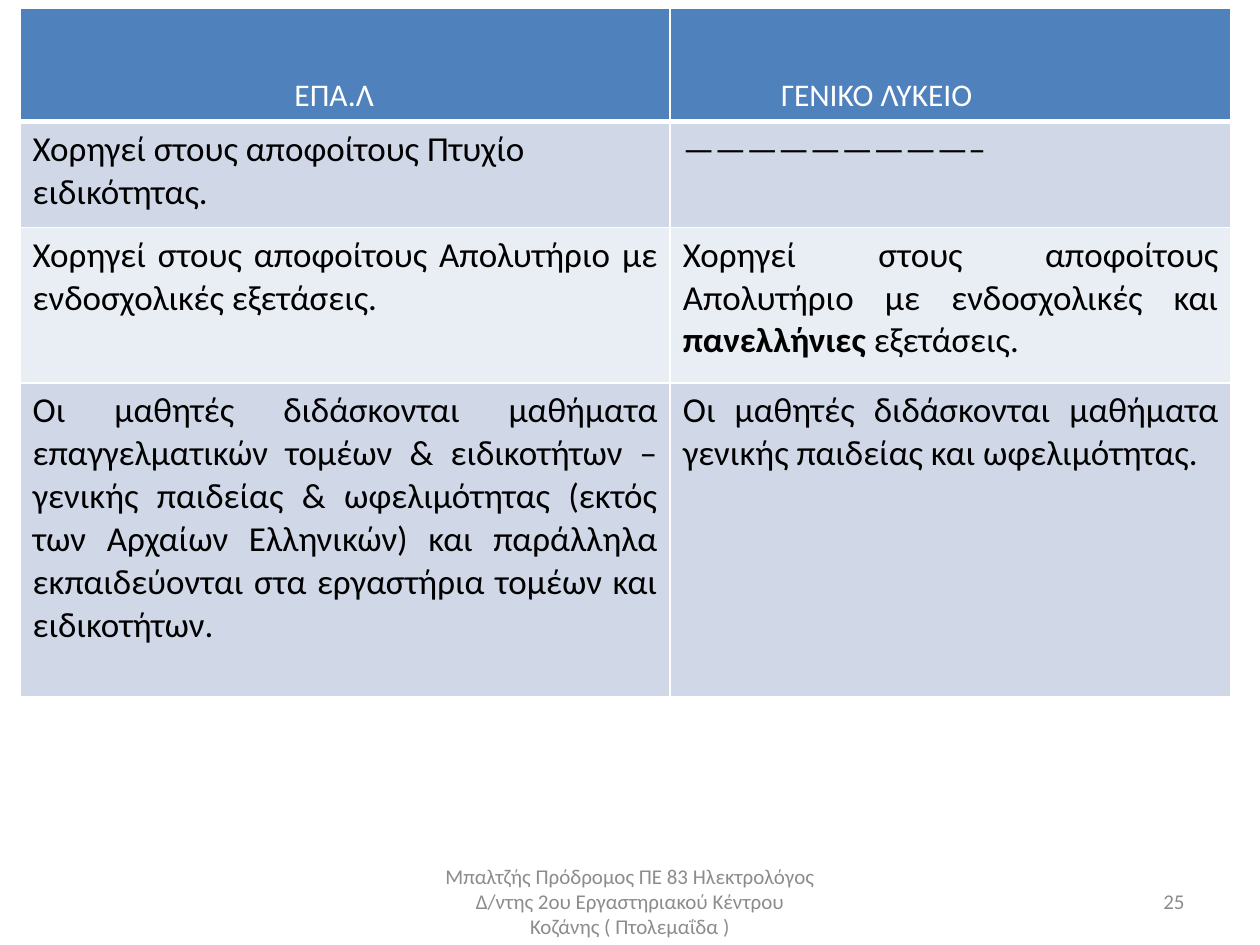
from lxml.etree import SubElement
from pptx import Presentation
from pptx.dml.color import RGBColor
from pptx.enum.text import MSO_ANCHOR, PP_ALIGN
from pptx.oxml.ns import qn
from pptx.util import Pt

COLORS = {
    "header": "4F81BD",
    "band_dark": "D0D8E8",
    "band_light": "E9EDF4",
    "white": "FFFFFF",
    "black": "000000",
    "grey": "8C8C8C",
}
FONT = "Calibri"
COL_WIDTHS = [371.5, 320.5]
ROW_HEIGHTS = [65, 60.5, 89, 179]
ROW_FILLS = ["header", "band_dark", "band_light", "band_dark"]
EMPHASIS = "πανελλήνιες"
ROWS = [
    ["", ""],
    ["Χορηγεί στους αποφοίτους Πτυχίο ειδικότητας.", "—————————–"],
    [
        "Χορηγεί στους αποφοίτους Απολυτήριο με ενδοσχολικές εξετάσεις.",
        "Χορηγεί στους αποφοίτους Απολυτήριο με ενδοσχολικές και "
        "πανελλήνιες εξετάσεις.",
    ],
    [
        "Οι μαθητές διδάσκονται μαθήματα επαγγελματικών τομέων & ειδικοτήτων – "
        "γενικής παιδείας & ωφελιμότητας (εκτός των Αρχαίων Ελληνικών) και "
        "παράλληλα εκπαιδεύονται στα εργαστήρια τομέων και ειδικοτήτων.",
        "Οι μαθητές διδάσκονται μαθήματα γενικής παιδείας και ωφελιμότητας.",
    ],
]


def rgb(name):
    return RGBColor.from_string(COLORS[name])


def format_run(r, size, color, bold=False):
    r.font.name = FONT
    r.font.size = Pt(size)
    r.font.bold = bold
    r.font.color.rgb = rgb(color)


def set_borders(cell, top, bottom):
    tcPr = cell._tc.get_or_add_tcPr()
    for side, width in (("L", 1), ("R", 1), ("T", top), ("B", bottom)):
        ln = SubElement(tcPr, qn(f"a:ln{side}"), w=str(Pt(width)))
        fill = SubElement(ln, qn("a:solidFill"))
        SubElement(fill, qn("a:srgbClr"), val=COLORS["white"])


def fill_cell(cell, text, align):
    p = cell.text_frame.paragraphs[0]
    p.alignment = align
    before, word, after = text.partition(EMPHASIS)
    for part in filter(None, (before, word, after)):
        r = p.add_run()
        r.text = part
        format_run(r, 20, "black", part == EMPHASIS)


def add_comparison_table(s):
    frame = s.shapes.add_table(len(ROWS), len(COL_WIDTHS), Pt(11.5), Pt(4.5),
                               Pt(sum(COL_WIDTHS)), Pt(sum(ROW_HEIGHTS)))
    table = frame.table
    table.first_row = table.horz_banding = False
    for column, width in zip(table.columns, COL_WIDTHS):
        column.width = Pt(width)
    for i, (row, height) in enumerate(zip(table.rows, ROW_HEIGHTS)):
        row.height = Pt(height)
        align = PP_ALIGN.JUSTIFY if i > 1 else PP_ALIGN.LEFT
        for cell, text in zip(row.cells, ROWS[i]):
            set_borders(cell, 3 if i == 1 else 1, 3 if i == 0 else 1)
            cell.fill.solid()
            cell.fill.fore_color.rgb = rgb(ROW_FILLS[i])
            fill_cell(cell, text, align)


def add_label(s, box, text, size, color, align=PP_ALIGN.CENTER,
              anchor=MSO_ANCHOR.TOP):
    tf = s.shapes.add_textbox(*map(Pt, box)).text_frame
    tf.word_wrap = True
    tf.vertical_anchor = anchor
    tf.text = text
    p = tf.paragraphs[0]
    p.alignment = align
    format_run(p.runs[0], size, color)


def main():
    prs = Presentation()
    prs.slide_width, prs.slide_height = Pt(720), Pt(540)
    s = prs.slides.add_slide(prs.slide_layouts[6])
    add_comparison_table(s)
    for left, title in ((84, "ΕΠΑ.Λ"), (394, "ΓΕΝΙΚΟ ΛΥΚΕΙΟ")):
        add_label(s, (left, 39.5, 214, 29), title, 18, "white")
    add_label(s, (516, 500.5, 168, 28.75), "25", 12, "grey",
              PP_ALIGN.RIGHT, MSO_ANCHOR.MIDDLE)
    add_label(s, (246, 500.5, 228, 28.75),
              "Μπαλτζής Πρόδρομος ΠΕ 83 Ηλεκτρολόγος Δ/ντης 2ου "
              "Εργαστηριακού Κέντρου Κοζάνης ( Πτολεμαΐδα )",
              12, "grey", anchor=MSO_ANCHOR.MIDDLE)
    prs.save("out.pptx")


if __name__ == "__main__":
    main()
